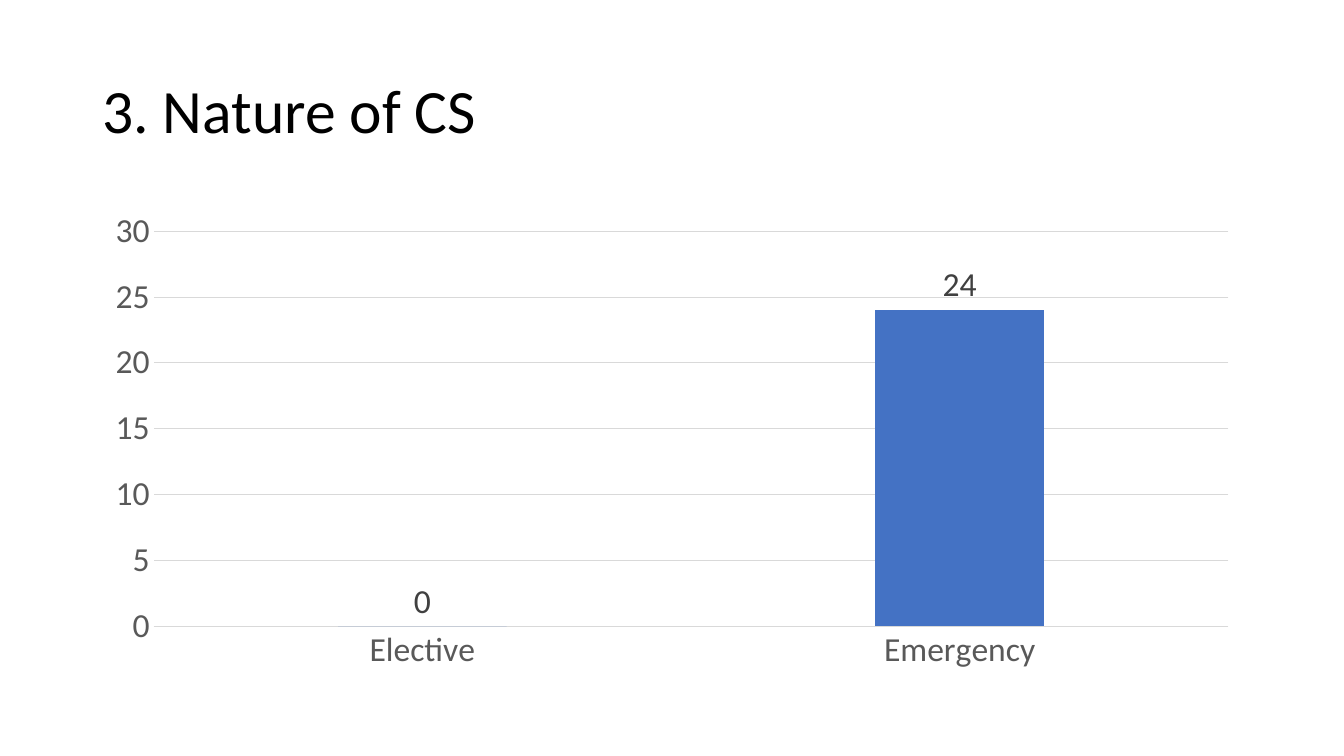
"""Build the slide on the nature of CS with its column chart."""
import dataclasses

import pptx
import pptx.chart.data
import pptx.dml.color
import pptx.enum.chart
import pptx.enum.text
import pptx.util
from pptx.util import Cm


@dataclasses.dataclass(frozen=True)
class Theme:
    face: str = "Calibri"
    black: str = "000000"
    label: str = "404040"
    axis: str = "595959"
    grid: str = "D9D9D9"
    bar: str = "4472C4"
    title: int = 44
    body: int = 24


theme = Theme()


def style(font, size, color):
    font.name = theme.face
    font.size = pptx.util.Pt(size)
    font.bold = False
    font.color.rgb = pptx.dml.color.RGBColor.from_string(color)


def rule(line):
    line.width = pptx.util.Pt(0.75)
    line.color.rgb = pptx.dml.color.RGBColor.from_string(theme.grid)


deck = pptx.Presentation()
deck.slide_width = Cm(33.87)
deck.slide_height = Cm(19.05)
slide = deck.slides.add_slide(deck.slide_layouts[6])
left, width = Cm(2.33), Cm(29.21)

title = slide.shapes.add_textbox(left, Cm(1.01), width, Cm(3.68))
frame = title.text_frame
frame.word_wrap = True
frame.vertical_anchor = pptx.enum.text.MSO_ANCHOR.MIDDLE
para = frame.paragraphs[0]
para.line_spacing = 0.9
run = para.add_run()
run.text = "3. Nature of CS"
style(run.font, theme.title, theme.black)

data = pptx.chart.data.CategoryChartData()
data.categories = ["Elective", "Emergency"]
data.add_series("Series 1", [0, 24])
chart = slide.shapes.add_chart(
    pptx.enum.chart.XL_CHART_TYPE.COLUMN_CLUSTERED,
    left, Cm(5.07), width, Cm(12.09), data).chart
chart.has_title = False
chart.has_legend = False
style(chart.font, theme.body, theme.black)

for axis in (chart.category_axis, chart.value_axis):
    axis.major_tick_mark = pptx.enum.chart.XL_TICK_MARK.NONE
    axis.minor_tick_mark = pptx.enum.chart.XL_TICK_MARK.NONE
    style(axis.tick_labels.font, theme.body, theme.axis)
rule(chart.category_axis.format.line)
scale = chart.value_axis
scale.minimum_scale = 0
scale.maximum_scale = 30
scale.major_unit = 5
scale.format.line.fill.background()
rule(scale.major_gridlines.format.line)

plot = chart.plots[0]
plot.vary_by_categories = False
plot.gap_width = 219
plot.overlap = -27
bars = plot.series[0]
bars.format.fill.solid()
bars.format.fill.fore_color.rgb = pptx.dml.color.RGBColor.from_string(theme.bar)
labels = bars.data_labels
labels.show_value = True
labels.position = pptx.enum.chart.XL_LABEL_POSITION.OUTSIDE_END
style(labels.font, theme.body, theme.label)

deck.save("out.pptx")
